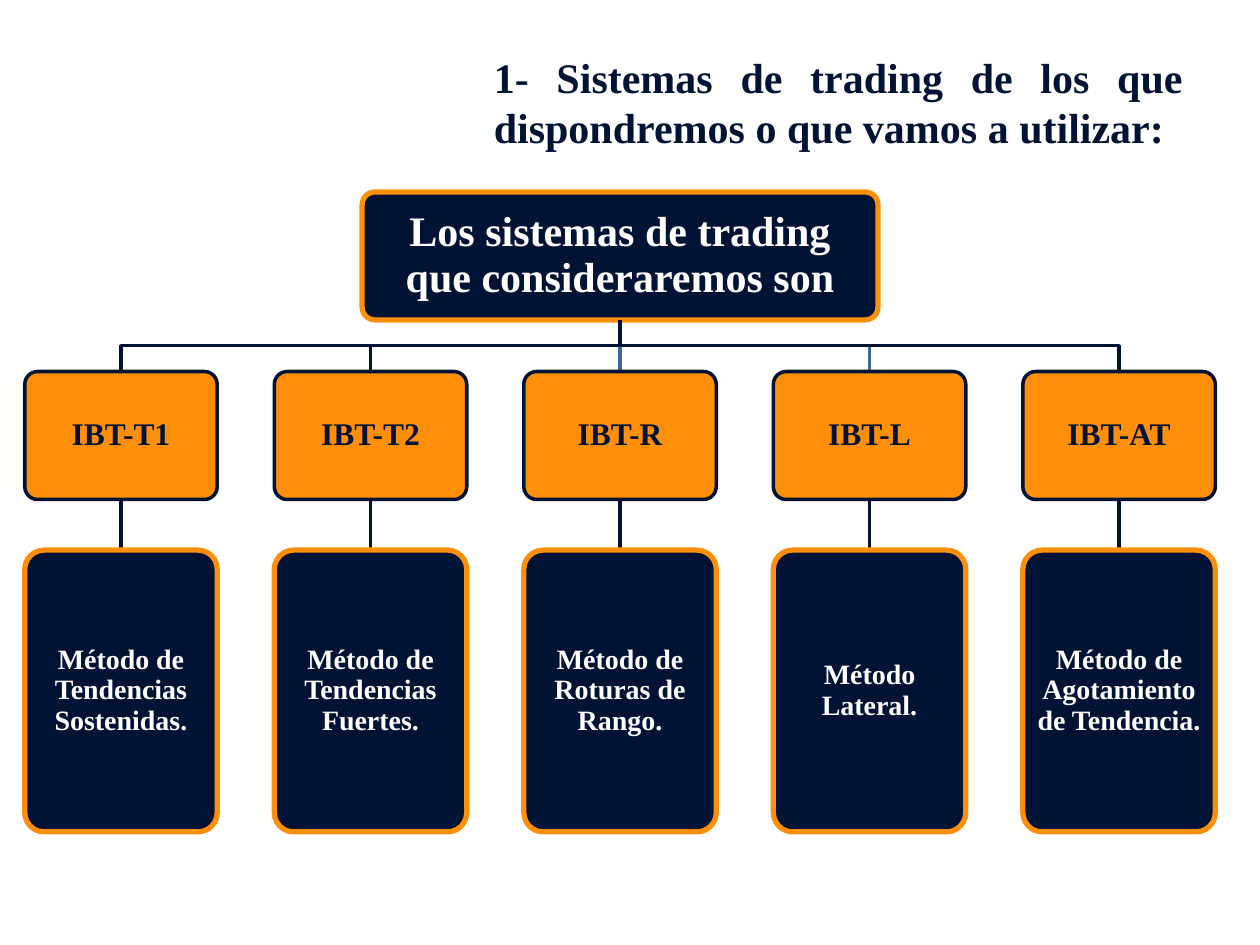
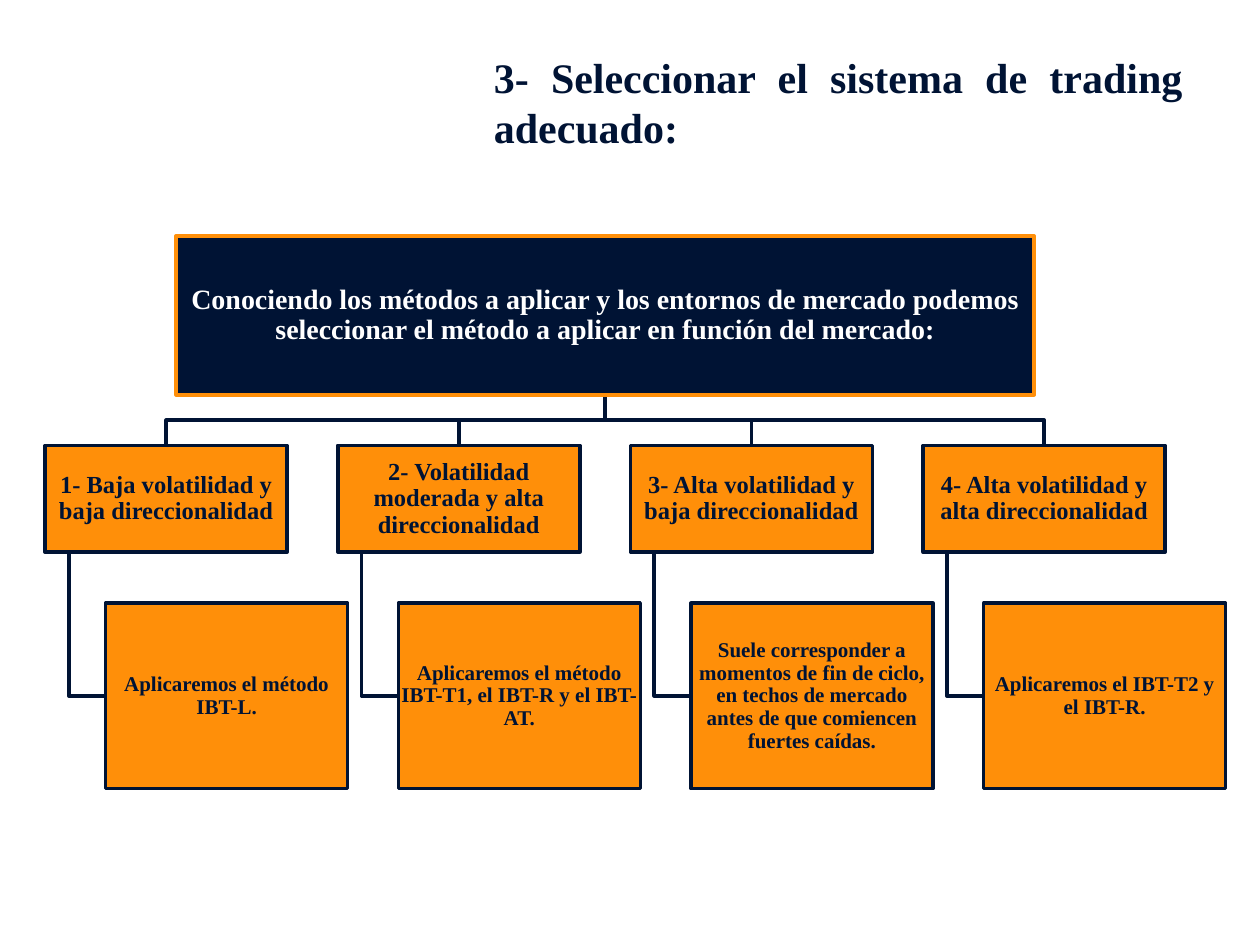
"""Build two slides of trading-system tree diagrams."""
from lxml import etree
from pptx import Presentation
from pptx.dml.color import RGBColor
from pptx.enum.shapes import MSO_CONNECTOR, MSO_SHAPE
from pptx.enum.text import MSO_ANCHOR, MSO_AUTO_SIZE, PP_ALIGN
from pptx.oxml.ns import qn
from pptx.util import Cm, Pt

STRAIGHT = MSO_CONNECTOR.STRAIGHT
RECTANGLE, ROUNDED = MSO_SHAPE.RECTANGLE, MSO_SHAPE.ROUNDED_RECTANGLE
TOP, MIDDLE = MSO_ANCHOR.TOP, MSO_ANCHOR.MIDDLE
NO_AUTOFIT = MSO_AUTO_SIZE.NONE
CENTER, JUSTIFY = PP_ALIGN.CENTER, PP_ALIGN.JUSTIFY

FONT = "Times New Roman"
COLORS = {
    name: RGBColor.from_string(value)
    for name, value in {
        "navy": "001334",
        "orange": "FF8F09",
        "white": "FFFFFF",
        "blue": "3F6797",
    }.items()
}
THEMES = {"navy": ("orange", "white"), "orange": ("navy", "navy")}
TITLES = [
    "1- Sistemas de trading de los que dispondremos o que vamos a utilizar:",
    "3- Seleccionar el sistema de trading adecuado:",
]


def add_box(page, kind, text, place, fill, size, inset, border=2):
    outline, ink = THEMES[fill]
    box = page.shapes.add_shape(kind, *[Cm(length) for length in place])
    box.shadow.inherit = False
    box.fill.solid()
    box.fill.fore_color.rgb = COLORS[fill]
    box.line.color.rgb = COLORS[outline]
    box.line.width = Pt(border)
    if kind == ROUNDED:
        box.adjustments[0] = 0.1
    frame = box.text_frame
    frame.word_wrap = True
    frame.vertical_anchor = MIDDLE
    frame.margin_left = frame.margin_right = Cm(inset)
    frame.margin_top = frame.margin_bottom = Cm(inset)
    frame.text = text
    para = frame.paragraphs[0]
    para.alignment = CENTER
    para.line_spacing = 0.9
    font = para.runs[0].font
    font.name, font.size, font.bold = FONT, Pt(size), True
    font.color.rgb = COLORS[ink]
    return box


def add_path(page, points, color="navy"):
    corners = [(Cm(x), Cm(y)) for x, y in points]
    if len(corners) == 2:
        path = page.shapes.add_connector(STRAIGHT, *corners[0], *corners[1])
    else:
        builder = page.shapes.build_freeform(*corners[0])
        builder.add_line_segments(corners[1:], close=False)
        path = builder.convert_to_shape()
        path.fill.background()
    path.line.color.rgb = COLORS[color]
    path.line.width = Pt(2)
    etree.SubElement(path._element.spPr, qn("a:effectLst"))
    return path


deck = Presentation()
deck.slide_width, deck.slide_height = Cm(25.4), Cm(19.05)

for heading in TITLES:
    page = deck.slides.add_slide(deck.slide_layouts[5])
    title = page.shapes.title
    title.left, title.top = Cm(9.7), Cm(0.91)
    title.width, title.height = Cm(14.4), Cm(2.31)
    frame = title.text_frame
    frame.text = heading
    frame.word_wrap = True
    frame.auto_size = NO_AUTOFIT
    frame.vertical_anchor = TOP
    para = frame.paragraphs[0]
    para.alignment = JUSTIFY
    font = para.runs[0].font
    font.name, font.size, font.bold = FONT, Pt(24), True
    font.color.rgb = COLORS["navy"]

systems_page, selection_page = deck.slides

systems = [
    ("IBT-T1", "Método de Tendencias Sostenidas.", "navy"),
    ("IBT-T2", "Método de Tendencias Fuertes.", "navy"),
    ("IBT-R", "Método de Roturas de Rango.", "blue"),
    ("IBT-L", "Método Lateral.", "blue"),
    ("IBT-AT", "Método de Agotamiento de Tendencia.", "navy"),
]
root_x, root_bottom, bus_y = 12.5, 6.45, 6.97
system_top, system_bottom, method_top = 7.49, 10.07, 11.09
column_width = 3.88
root = add_box(
    systems_page, ROUNDED, "Los sistemas de trading que consideraremos son",
    (7.3, 3.87, 10.4, 2.58), "navy", 24, 0.25, 3,
)
for index, (name, method, branch_color) in enumerate(systems):
    left = 0.5 + 5.03 * index
    center = left + column_width / 2
    is_middle = index == len(systems) // 2
    bends = [] if is_middle else [(root_x, bus_y), (center, bus_y)]
    branch = add_path(
        systems_page,
        [(root_x, root_bottom), *bends, (center, system_top)], branch_color,
    )
    system_box = add_box(
        systems_page, ROUNDED, name,
        (left, system_top, column_width, 2.58), "orange", 18, 0.18,
    )
    link = add_path(
        systems_page, [(center, system_bottom), (center, method_top)]
    )
    method_box = add_box(
        systems_page, ROUNDED, method,
        (left, method_top, column_width, 5.68), "navy", 16, 0.18, 3,
    )
    link.begin_connect(system_box, 2)
    link.end_connect(method_box, 0)
    if is_middle:
        branch.begin_connect(root, 2)
        branch.end_connect(system_box, 0)

cases = [
    ("1- Baja volatilidad y baja direccionalidad",
     "Aplicaremos el método IBT-L."),
    ("2- Volatilidad moderada y alta direccionalidad",
     "Aplicaremos el método IBT-T1, el IBT-R y el IBT-AT."),
    ("3- Alta volatilidad y baja direccionalidad",
     "Suele corresponder a momentos de fin de ciclo, en techos de mercado "
     "antes de que comiencen fuertes caídas."),
    ("4- Alta volatilidad y alta direccionalidad",
     "Aplicaremos el IBT-T2 y el IBT-R."),
]
root_x, root_bottom, bus_y = 12.2, 7.96, 8.47
case_top, case_bottom, action_top, action_middle = 8.98, 11.13, 12.16, 14.03
column_width = 4.88
for index, (case, action) in enumerate(cases):
    left = 0.91 + 5.9 * index
    center = left + column_width / 2
    trunk_x, action_left = left + 0.48, left + 1.22
    add_path(selection_page, [
        (root_x, root_bottom), (root_x, bus_y),
        (center, bus_y), (center, case_top),
    ])
    add_path(selection_page, [
        (trunk_x, case_bottom), (trunk_x, action_middle),
        (action_left, action_middle),
    ])
    add_box(
        selection_page, RECTANGLE, case,
        (left, case_top, column_width, 2.15), "orange", 14, 0.03,
    )
    add_box(
        selection_page, RECTANGLE, action,
        (action_left, action_top, column_width, 3.74), "orange", 12, 0.03,
    )
add_box(
    selection_page, RECTANGLE,
    "Conociendo los métodos a aplicar y los entornos de mercado podemos "
    "seleccionar el método a aplicar en función del mercado:",
    (3.55, 4.76, 17.3, 3.2), "navy", 16, 0.03,
)

deck.save("out.pptx")
